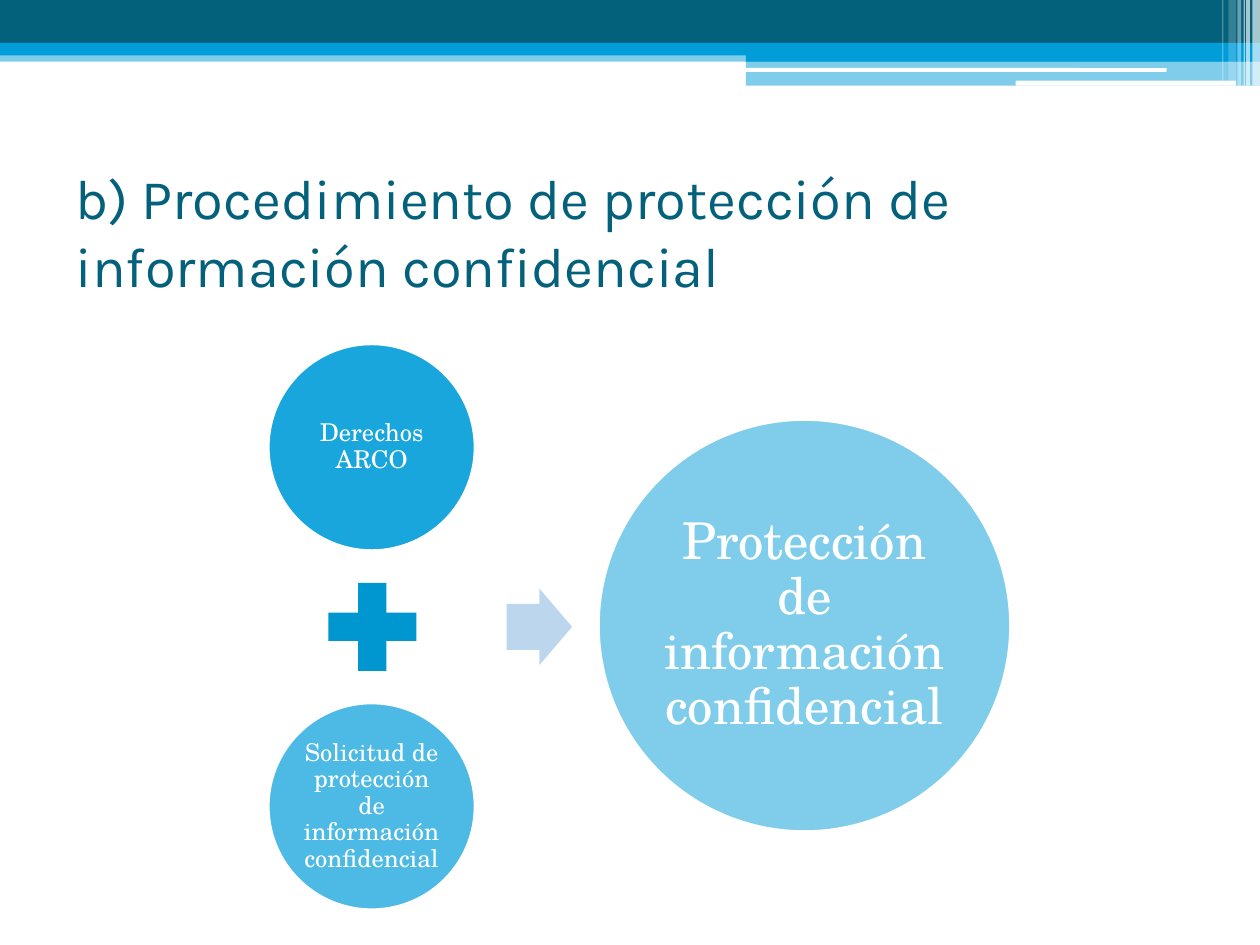
from lxml import etree
from pptx import Presentation
from pptx.dml.color import RGBColor
from pptx.enum.shapes import MSO_SHAPE
from pptx.enum.text import MSO_ANCHOR, PP_ALIGN
from pptx.oxml.ns import qn
from pptx.util import Inches, Pt

RECT, ROUND = MSO_SHAPE.RECTANGLE, MSO_SHAPE.ROUNDED_RECTANGLE
OVAL, PLUS, ARROW = MSO_SHAPE.OVAL, MSO_SHAPE.MATH_PLUS, MSO_SHAPE.RIGHT_ARROW
MIDDLE, CENTER = MSO_ANCHOR.MIDDLE, PP_ALIGN.CENTER

TEAL = RGBColor(0x04, 0x61, 0x7B)
BLUE = RGBColor(0x00, 0x9D, 0xD9)
DEEP = RGBColor(0x00, 0x96, 0xCF)
PALE = RGBColor(0xBC, 0xD6, 0xED)
WHITE = RGBColor(0xFF, 0xFF, 0xFF)


class Deck:
    head_font = "Karla"
    body_font = "TeX Gyre Schola"

    def __init__(self, slide):
        self.slide = slide

    def shape(self, kind, box, color, alpha=100):
        item = self.slide.shapes.add_shape(kind, *map(Inches, box))
        item.shadow.inherit = False
        item.fill.solid()
        item.fill.fore_color.rgb = color
        item.line.fill.background()
        if alpha < 100:
            fill = item.element.spPr.find(qn("a:solidFill"))
            etree.SubElement(fill[0], qn("a:alpha"), val=str(alpha * 1000))
        return item

    def label(self, item, text, font, size, color):
        frame = item.text_frame
        frame.word_wrap = True
        frame.vertical_anchor = MIDDLE
        frame.text = text
        style = frame.paragraphs[0].runs[0].font
        style.name, style.size = font, Pt(size)
        style.color.rgb = color
        return frame

    def title(self, box, text):
        item = self.slide.shapes.add_textbox(*map(Inches, box))
        self.label(item, text, self.head_font, 32, TEAL)

    def circle(self, left, top, size, alpha, text, points, inset):
        item = self.shape(OVAL, (left, top, size, size), BLUE, alpha)
        item.line.color.rgb = WHITE
        item.line.width = Pt(1.5)
        frame = self.label(item, text, self.body_font, points, WHITE)
        frame.margin_left = frame.margin_right = Inches(inset)
        frame.margin_top = frame.margin_bottom = Inches(inset)
        para = frame.paragraphs[0]
        para.alignment = CENTER
        para.line_spacing = 0.9


def main():
    prs = Presentation()
    prs.slide_width, prs.slide_height = Inches(10), Inches(7.5)
    deck = Deck(prs.slides.add_slide(prs.slide_layouts[6]))

    # Header bands
    for box, color, alpha in (
        ((0, 0.4, 10, 0.09), BLUE, 50),
        ((0, 0, 10, 0.34), TEAL, 100),
        ((0, 0.34, 10, 0.1), BLUE, 100),
        ((5.92, 0.39, 4.08, 0.1), BLUE, 100),
        ((5.92, 0.48, 4.08, 0.2), BLUE, 50),
    ):
        deck.shape(RECT, box, color, alpha)
    for box in ((5.91, 0.54, 3.35, 0.03), (8.06, 0.64, 1.75, 0.04)):
        deck.shape(ROUND, box, WHITE)

    # Light stripes at the right edge
    for left, width, height, alpha in (
        (9.94, 0.06, 0.68, 65),
        (9.89, 0.03, 0.68, 65),
        (9.87, 0.01, 0.68, 60),
        (9.82, 0.03, 0.68, 40),
        (9.75, 0.06, 0.64, 20),
        (9.7, 0.01, 0.64, 30),
    ):
        deck.shape(RECT, (left, 0, width, height), WHITE, alpha)

    # Title
    deck.title((0.5, 1.25, 9, 1.17),
               "b) Procedimiento de protección de información confidencial")

    # Two terms add up to the result
    deck.circle(2.13, 2.73, 1.64, 90, "Derechos ARCO", 14, 0.02)
    deck.shape(PLUS, (2.48, 4.5, 0.95, 0.95), DEEP)
    deck.circle(2.13, 5.58, 1.64, 70,
                "Solicitud de protección de información confidencial", 14, 0.02)
    arrow = deck.shape(ARROW, (4.02, 4.67, 0.52, 0.61), PALE)
    arrow.adjustments[0] = 0.6
    deck.circle(4.75, 3.33, 3.27, 50,
                "Protección de información confidencial", 29, 0.04)

    prs.save("out.pptx")


if __name__ == "__main__":
    main()
